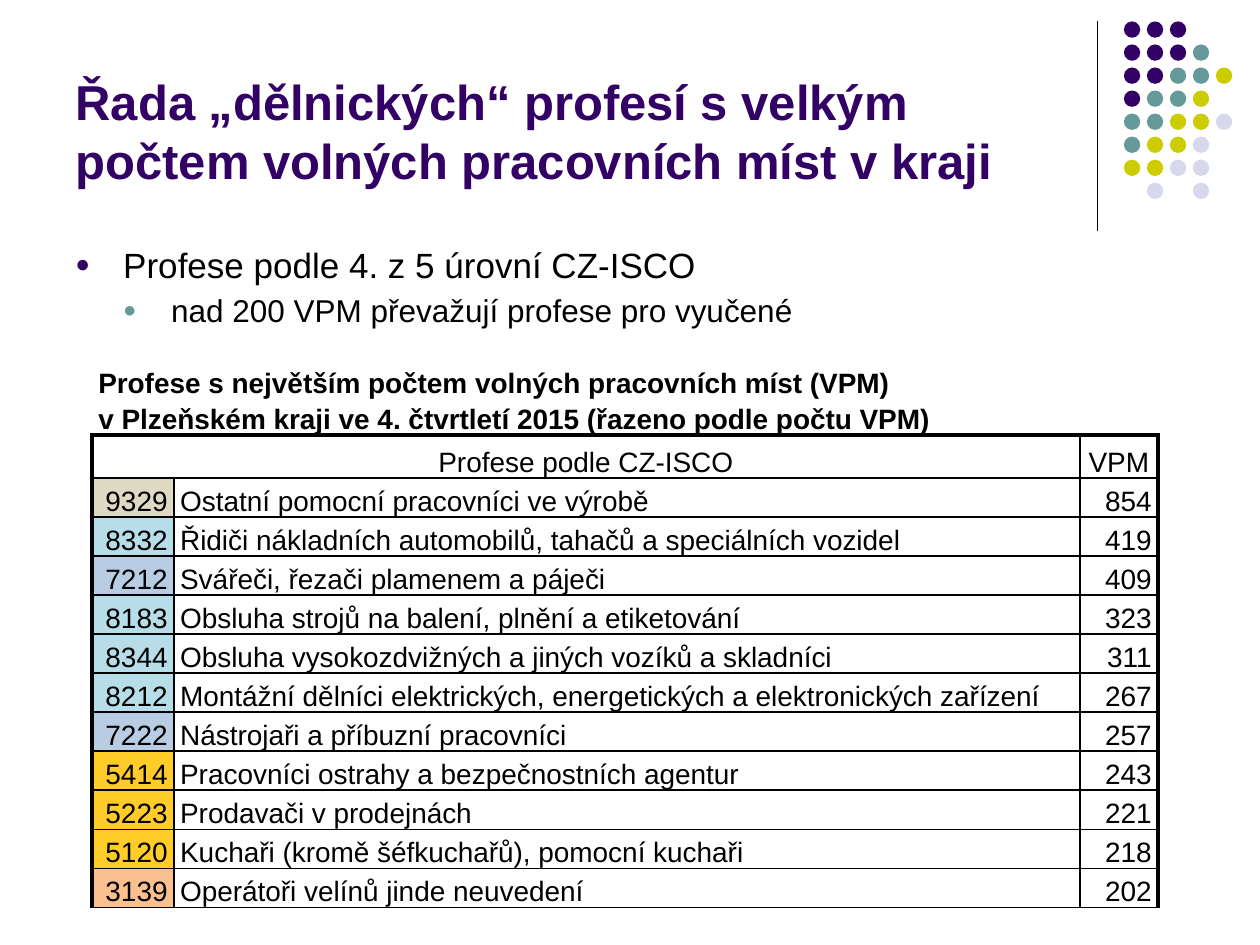
import pptx
import pptx.dml.color
import pptx.enum.shapes
import pptx.enum.text
import pptx.oxml
import pptx.oxml.ns
import pptx.util

ALIGN = pptx.enum.text.PP_ALIGN
ANCHOR = pptx.enum.text.MSO_ANCHOR
BLACK, PURPLE, TEAL = "000000", "330066", "669999"
DOT_COLOURS = {"P": PURPLE, "T": TEAL, "Y": "CCCC00", "L": "D8D8EC"}
DOT_ROWS = ["PPP", "PPPT", "PPTTY", "PTTY", "TTYYL", "TYYL", "YYLL", " L L"]
GROUP_FILLS = {"9": "DDD9C3", "8": "B6DDE8", "7": "B8CCE4", "5": "FFCC29", "3": "FAC090"}
CAPTION = [
    "Profese s největším počtem volných pracovních míst (VPM)",
    "v Plzeňském kraji ve 4. čtvrtletí 2015 (řazeno podle počtu VPM)",
]
PROFESSIONS = [
    ("9329", "Ostatní pomocní pracovníci ve výrobě", "854"),
    ("8332", "Řidiči nákladních automobilů, tahačů a speciálních vozidel", "419"),
    ("7212", "Svářeči, řezači plamenem a páječi", "409"),
    ("8183", "Obsluha strojů na balení, plnění a etiketování", "323"),
    ("8344", "Obsluha vysokozdvižných a jiných vozíků a skladníci", "311"),
    ("8212", "Montážní dělníci elektrických, energetických a elektronických zařízení", "267"),
    ("7222", "Nástrojaři a příbuzní pracovníci", "257"),
    ("5414", "Pracovníci ostrahy a bezpečnostních agentur", "243"),
    ("5223", "Prodavači v prodejnách", "221"),
    ("5120", "Kuchaři (kromě šéfkuchařů), pomocní kuchaři", "218"),
    ("3139", "Operátoři velínů jinde neuvedení", "202"),
]


def inches(*lengths):
    return [pptx.util.Inches(length) for length in lengths]


def colour(value):
    return pptx.dml.color.RGBColor.from_string(value)


def set_values(target, values):
    for name, value in values.items():
        setattr(target, name, value)


def xml(tag, attributes="", content=""):
    namespace = pptx.oxml.ns.nsdecls("a")
    return pptx.oxml.parse_xml(f"<a:{tag} {namespace} {attributes}>{content}</a:{tag}>")


def write(paragraph, text, size, value=BLACK, bold=False):
    run = paragraph.add_run()
    run.text = text
    set_values(run.font, {"name": "Arial", "size": pptx.util.Pt(size), "bold": bold})
    run.font.color.rgb = colour(value)


def add_dots(slide, box, diameter=0.13):
    left, top, width, height = box
    column_step = (width - diameter) / 4
    row_step = (height - diameter) / (len(DOT_ROWS) - 1)
    for row, codes in enumerate(DOT_ROWS):
        for column, code in enumerate(codes):
            if code == " ":
                continue
            place = inches(left + column * column_step, top + row * row_step, diameter, diameter)
            dot = slide.shapes.add_shape(pptx.enum.shapes.MSO_SHAPE.OVAL, *place)
            dot.shadow.inherit = False
            dot.fill.solid()
            dot.fill.fore_color.rgb = colour(DOT_COLOURS[code])
            dot.line.fill.background()


def add_divider(slide, box):
    left, top, width, height = box
    line = slide.shapes.add_connector(
        pptx.enum.shapes.MSO_CONNECTOR.STRAIGHT, *inches(left, top, left + width, top + height))
    line.line.color.rgb = colour(BLACK)
    line.line.width = pptx.util.Pt(0.75)
    line._element.spPr.append(xml("effectLst"))


def place_title(slide, box):
    title = slide.shapes.title
    set_values(title, dict(zip(("left", "top", "width", "height"), inches(*box))))
    set_values(title.text_frame, {
        "vertical_anchor": ANCHOR.BOTTOM, "word_wrap": True,
        "auto_size": pptx.enum.text.MSO_AUTO_SIZE.NONE})
    paragraph = title.text_frame.paragraphs[0]
    paragraph.alignment = ALIGN.LEFT
    write(paragraph, "Řada „dělnických“ profesí s velkým počtem volných pracovních míst v kraji",
          28, PURPLE, True)


def add_bullets(slide, box, indent=0.38):
    frame = slide.shapes.add_textbox(*inches(*box)).text_frame
    frame.word_wrap = True
    items = [
        ("Profese podle 4. z 5 úrovní CZ-ISCO", 20, PURPLE),
        ("nad 200 VPM převažují profese pro vyučené", 18, TEAL),
    ]
    for level, (text, size, bullet_colour) in enumerate(items):
        paragraph = frame.add_paragraph() if level else frame.paragraphs[0]
        set_values(paragraph, {"level": level, "space_before": pptx.util.Pt(size * 0.2)})
        write(paragraph, text, size)
        properties = paragraph._p.get_or_add_pPr()
        properties.set("marL", str(pptx.util.Inches(indent * (level + 1))))
        properties.set("indent", str(pptx.util.Inches(-indent)))
        properties.append(xml("buClr", content=f'<a:srgbClr val="{bullet_colour}"/>'))
        properties.append(xml("buSzPct", 'val="70000"'))
        properties.append(xml("buFont", 'typeface="Arial"'))
        properties.append(xml("buChar", 'char="●"'))


def set_borders(cell, widths):
    properties = cell._tc.get_or_add_tcPr()
    for position, (side, width) in enumerate(zip("LRTB", widths)):
        paint = f'<a:solidFill><a:srgbClr val="{BLACK}"/></a:solidFill>' if width else "<a:noFill/>"
        properties.insert(position, xml(f"ln{side}", f'w="{pptx.util.Pt(width)}"', paint))


def fill_cell(cell, lines, alignment, bold=False):
    margin = pptx.util.Inches(0.05)
    set_values(cell, {"margin_left": margin, "margin_right": margin, "margin_top": 0,
                      "margin_bottom": 0, "vertical_anchor": ANCHOR.BOTTOM})
    for index, text in enumerate(lines):
        paragraph = cell.text_frame.add_paragraph() if index else cell.text_frame.paragraphs[0]
        set_values(paragraph, {"alignment": alignment, "line_spacing": 1.15})
        write(paragraph, text, 16, bold=bold)


def add_profession_table(slide, box):
    row_heights = [0.56, 0.34] + [0.31] * len(PROFESSIONS)
    column_widths = [0.65, 7.19, 0.62]
    frame = slide.shapes.add_table(len(row_heights), len(column_widths), *inches(*box))
    table = frame.table
    set_values(table, {"first_row": False, "horz_banding": False})
    for row, height in zip(table.rows, inches(*row_heights)):
        row.height = height
    for column, width in zip(table.columns, inches(*column_widths)):
        column.width = width
    thick, thin = 2.25, 1
    for row in range(len(row_heights)):
        for column in range(len(column_widths)):
            cell = table.cell(row, column)
            cell.fill.background()
            left = thick if column == 0 else thin
            right = thick if column == 2 else thin
            top = thick if row == 1 else thin
            set_borders(cell, (left, right, top, thin) if row else (0, 0, 0, thick))
    table.cell(0, 0).merge(table.cell(0, 2))
    table.cell(1, 0).merge(table.cell(1, 1))
    fill_cell(table.cell(0, 0), CAPTION, ALIGN.LEFT, True)
    fill_cell(table.cell(1, 0), ["Profese podle CZ-ISCO"], ALIGN.CENTER)
    fill_cell(table.cell(1, 2), ["VPM"], ALIGN.CENTER)
    alignments = (ALIGN.RIGHT, ALIGN.LEFT, ALIGN.RIGHT)
    for row, profession in enumerate(PROFESSIONS, start=2):
        for column, (text, alignment) in enumerate(zip(profession, alignments)):
            fill_cell(table.cell(row, column), [text], alignment)
        code_cell = table.cell(row, 0)
        code_cell.fill.solid()
        code_cell.fill.fore_color.rgb = colour(GROUP_FILLS[profession[0][0]])


def main():
    presentation = pptx.Presentation()
    presentation.slide_width, presentation.slide_height = inches(10, 7.5)
    slide = presentation.slides.add_slide(presentation.slide_layouts[5])
    add_divider(slide, (8.71, 0.17, 0, 1.66))
    add_dots(slide, (8.92, 0.17, 0.86, 1.41))
    place_title(slide, (0.5, 0.13, 8.25, 1.42))
    add_bullets(slide, (0.5, 1.88, 9, 0.78))
    add_profession_table(slide, (0.73, 2.84, 8.46, 4.31))
    presentation.save("out.pptx")


if __name__ == "__main__":
    main()
